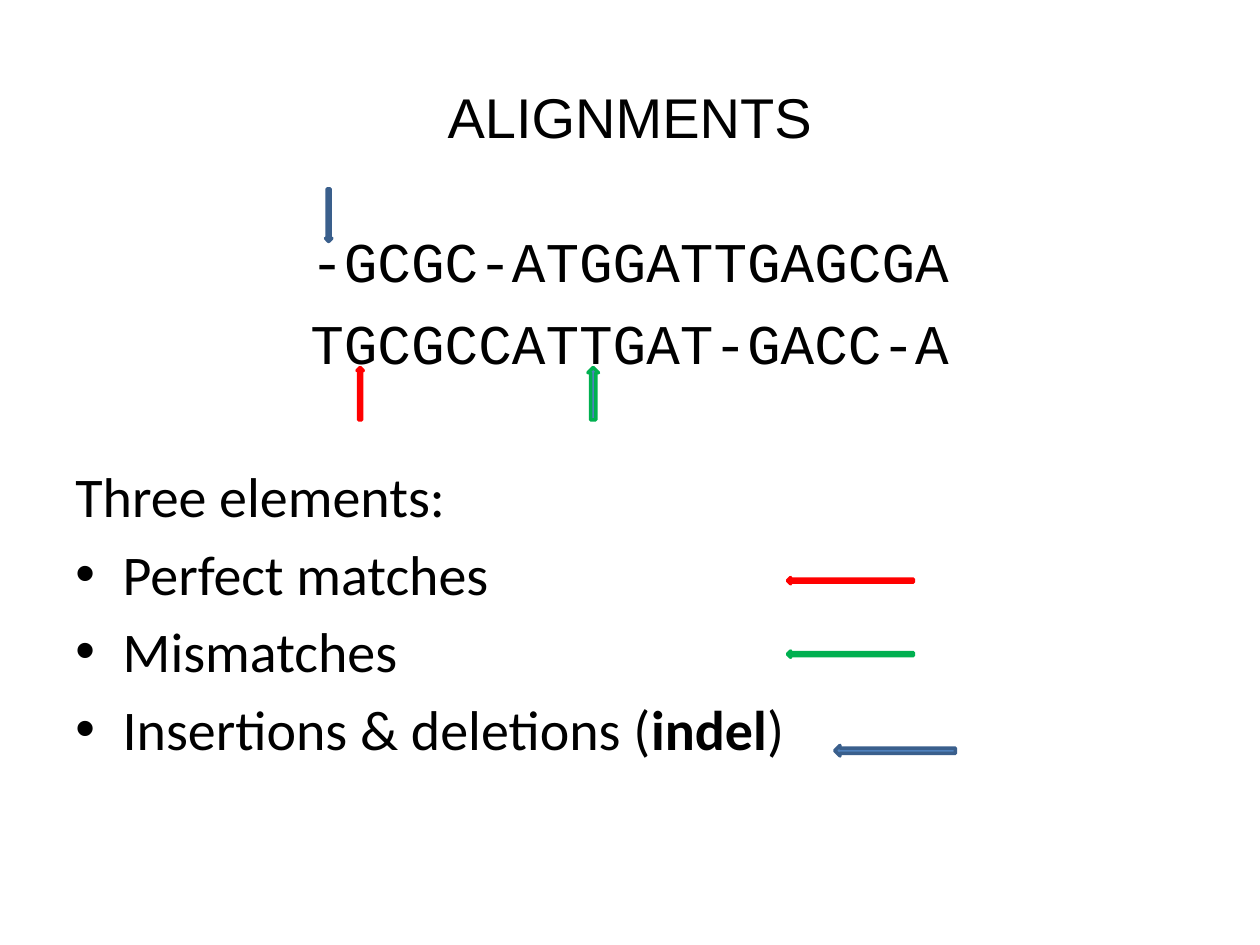
"""Build the sequence alignments slide."""
from dataclasses import dataclass

from lxml import etree
from pptx import Presentation
from pptx.dml.color import RGBColor
from pptx.enum import shapes, text
from pptx.oxml import ns
from pptx.util import Pt

COLORS = {"black": "000000", "red": "FF0000", "green": "00B050", "navy": "3A5F8C", "blue": "4F81BD"}
SHAPE = shapes.MSO_SHAPE
CENTER, LEFT = text.PP_ALIGN.CENTER, text.PP_ALIGN.LEFT
TOP, MIDDLE = text.MSO_ANCHOR.TOP, text.MSO_ANCHOR.MIDDLE


@dataclass
class Line:
    runs: list[str]
    font: str
    align: int = LEFT
    before: float = 6
    bullet: bool = False
    bold_run: int = -1


@dataclass
class Arrow:
    kind: int
    x: float
    y: float
    w: float
    h: float
    line: str
    fill: str = "blue"


TITLE = [Line(["ALIGNMENTS"], "Arial", CENTER, before=0)]
BODY = [
    Line(["-GCGC-ATGGATTGAGCGA"], "Courier New", CENTER, before=6.4),
    Line(["TGCGCCATTGAT-GACC-A"], "Courier New", CENTER, before=8.3),
    Line(["Three elements:"], "Calibri", before=49),
    Line(["Perfect matches"], "Calibri", bullet=True),
    Line(["Mismatches"], "Calibri", bullet=True),
    Line(["Insertions & deletions (", "indel", ")"], "Calibri", bullet=True, bold_run=1),
]
ARROWS = [
    Arrow(SHAPE.DOWN_ARROW, 186, 108, 3.6, 30, "navy", "red"),
    Arrow(SHAPE.UP_ARROW, 204, 210, 3.6, 30, "red"),
    Arrow(SHAPE.UP_ARROW, 336, 210, 6, 30, "green"),
    Arrow(SHAPE.LEFT_ARROW, 450, 330, 72, 3.6, "red"),
    Arrow(SHAPE.LEFT_ARROW, 450, 372, 72, 3.6, "green"),
    Arrow(SHAPE.LEFT_ARROW, 477, 426, 69, 6, "navy"),
]


def rgb(name: str) -> RGBColor:
    """Return the named colour."""
    return RGBColor.from_string(COLORS[name])


def add_bullet(p, indent: float = 27) -> None:
    """Give a paragraph a round bullet with a hanging indent."""
    pr = p._p.get_or_add_pPr()
    pr.set("marL", str(Pt(indent)))
    pr.set("indent", str(-Pt(indent)))
    etree.SubElement(pr, ns.qn("a:buFont")).set("typeface", "Arial")
    etree.SubElement(pr, ns.qn("a:buChar")).set("char", "•")


def add_text(slide, lines: list[Line], *, y: float, h: float, x: float = 36, w: float = 648,
             size: float = 32, color: str = "black", anchor: int = TOP) -> None:
    """Add a wrapped text box holding the given lines."""
    tf = slide.shapes.add_textbox(Pt(x), Pt(y), Pt(w), Pt(h)).text_frame
    tf.word_wrap = True
    tf.vertical_anchor = anchor
    for i, line in enumerate(lines):
        p = tf.add_paragraph() if i else tf.paragraphs[0]
        p.alignment = line.align
        p.space_before = Pt(line.before)
        if line.bullet:
            add_bullet(p)
        for j, words in enumerate(line.runs):
            r = p.add_run()
            r.text = words
            r.font.name = line.font
            r.font.size = Pt(size)
            r.font.bold = j == line.bold_run
            r.font.color.rgb = rgb(color)


def add_arrow(slide, arrow: Arrow) -> None:
    """Draw one thin block arrow."""
    sp = slide.shapes.add_shape(arrow.kind, Pt(arrow.x), Pt(arrow.y), Pt(arrow.w), Pt(arrow.h))
    sp.shadow.inherit = False
    sp.fill.solid()
    sp.fill.fore_color.rgb = rgb(arrow.fill)
    sp.line.color.rgb = rgb(arrow.line)
    sp.line.width = Pt(2)


def main() -> None:
    """Build and save the slide."""
    prs = Presentation()
    prs.slide_width, prs.slide_height = Pt(720), Pt(540)
    slide = prs.slides.add_slide(prs.slide_layouts[6])
    add_text(slide, TITLE, y=21.6, h=90, anchor=MIDDLE)
    add_text(slide, BODY, y=126, h=356.4)
    for arrow in ARROWS:
        add_arrow(slide, arrow)
    prs.save("out.pptx")


if __name__ == "__main__":
    main()
